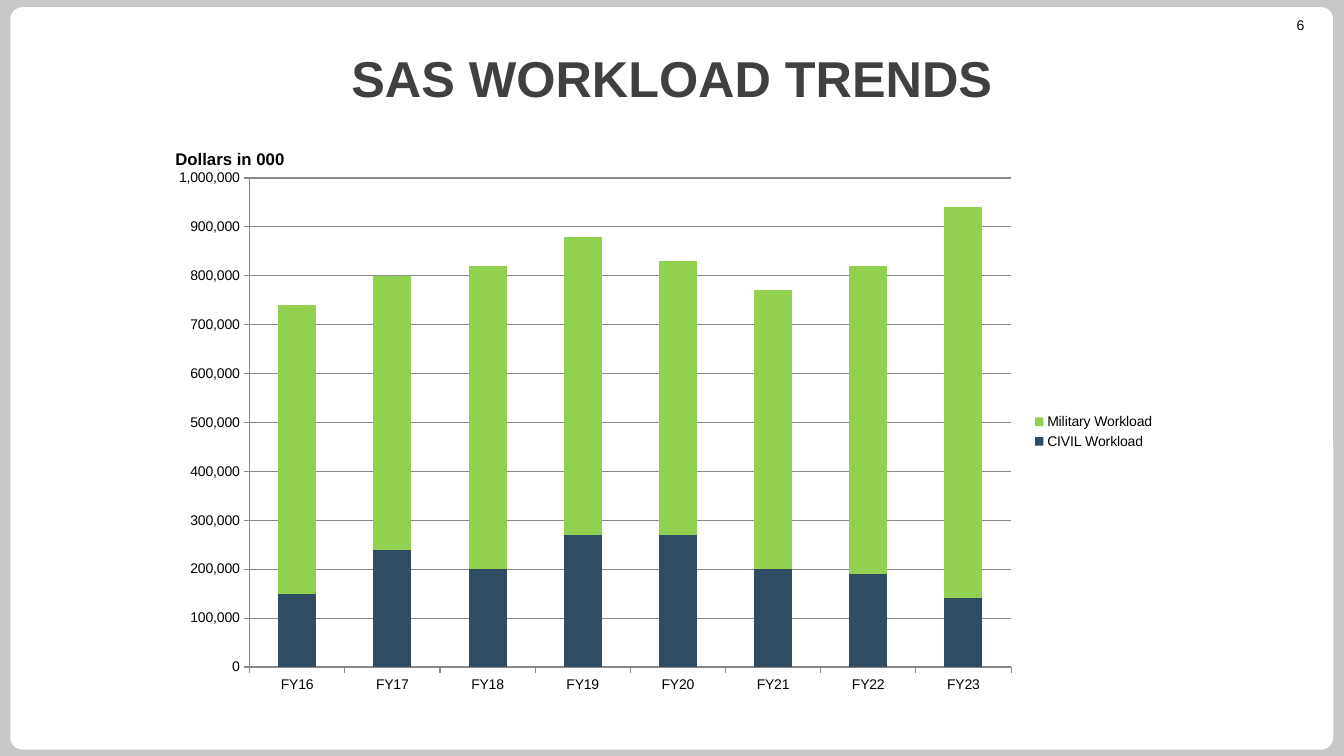
from lxml import etree
from pptx import Presentation
from pptx import util as u
from pptx.chart.data import CategoryChartData
from pptx.dml.color import RGBColor
from pptx.enum import chart as ch, shapes, text
from pptx.oxml import parse_xml
from pptx.oxml.ns import nsdecls

GREY = RGBColor(0xC8, 0xC8, 0xC8)
WHITE = RGBColor(0xFF, 0xFF, 0xFF)
BLACK = RGBColor(0, 0, 0)
CHARCOAL = RGBColor(0x40, 0x40, 0x40)
AXIS_GREY = RGBColor(0x87, 0x87, 0x87)
NAVY = RGBColor(0x2F, 0x4C, 0x62)
GREEN = RGBColor(0x92, 0xD0, 0x50)

YEARS = [f"FY{year}" for year in range(16, 24)]
WORKLOADS = [
    ("CIVIL Workload", NAVY,
     [150000, 240000, 200000, 270000, 270000, 200000, 190000, 140000]),
    ("Military Workload", GREEN,
     [590000, 560000, 620000, 610000, 560000, 570000, 630000, 800000]),
]


class SlideBuilder:
    font_name = "Arial"

    def __init__(self, slide):
        self.slide = slide
        slide.background.fill.solid()
        slide.background.fill.fore_color.rgb = GREY

    def style(self, font, size, color, bold=False):
        font.name = self.font_name
        font.size = u.Pt(size)
        font.bold = bold
        font.color.rgb = color

    def card(self, left, top, width, height):
        card = self.slide.shapes.add_shape(
            shapes.MSO_SHAPE.ROUNDED_RECTANGLE,
            u.Cm(left), u.Cm(top), u.Cm(width), u.Cm(height))
        card.adjustments[0] = 0.02
        card.shadow.inherit = False
        card.fill.solid()
        card.fill.fore_color.rgb = WHITE
        card.line.color.rgb = GREY
        card.line.width = u.Pt(4.5)
        # Send behind the title placeholder
        self.slide.shapes._spTree.insert(2, card._element)

    def title(self, wording, left, top, width, height):
        title = self.slide.shapes.title
        title.left, title.top = u.Cm(left), u.Cm(top)
        title.width, title.height = u.Cm(width), u.Cm(height)
        title.text_frame.text = wording
        title.text_frame.vertical_anchor = text.MSO_ANCHOR.MIDDLE
        heading = title.text_frame.paragraphs[0]
        heading.alignment = text.PP_ALIGN.CENTER
        self.style(heading.font, 36, CHARCOAL, bold=True)

    def label(self, wording, left, top, width, height, size, bold=False,
              align=text.PP_ALIGN.LEFT, inset=0.13, wrap=False):
        frame = self.slide.shapes.add_textbox(
            u.Cm(left), u.Cm(top), u.Cm(width), u.Cm(height)).text_frame
        frame.word_wrap = wrap
        frame.margin_top = frame.margin_bottom = u.Cm(inset)
        frame.text = wording
        frame.paragraphs[0].alignment = align
        self.style(frame.paragraphs[0].font, size, BLACK, bold)

    def stacked_columns(self, categories, series, left, top, width, height):
        data = CategoryChartData(number_format="#,##0")
        data.categories = categories
        for name, _, values in series:
            data.add_series(name, values)
        chart = self.slide.shapes.add_chart(
            ch.XL_CHART_TYPE.COLUMN_STACKED,
            u.Cm(left), u.Cm(top), u.Cm(width), u.Cm(height), data).chart
        chart.has_title = False
        self.style(chart.font, 10, BLACK)

        # Columns
        plot = chart.plots[0]
        plot.gap_width, plot.overlap = 150, 100
        plot.vary_by_categories = False
        for column, (_, color, _) in zip(plot.series, series):
            column.format.fill.solid()
            column.format.fill.fore_color.rgb = color

        # Axes and gridlines
        values_axis = chart.value_axis
        values_axis.minimum_scale, values_axis.maximum_scale = 0, 1000000
        values_axis.major_unit = 100000
        values_axis.has_major_gridlines = True
        values_axis.tick_labels.number_format = "#,##0"
        values_axis.tick_labels.number_format_is_linked = False
        for axis in (values_axis, chart.category_axis):
            axis.major_tick_mark = ch.XL_TICK_MARK.OUTSIDE
            axis.minor_tick_mark = ch.XL_TICK_MARK.NONE
        for part in (values_axis, chart.category_axis,
                     values_axis.major_gridlines):
            part.format.line.color.rgb = AXIS_GREY
            part.format.line.width = u.Pt(0.75)

        # Legend and plot area
        chart.has_legend = True
        chart.legend.position = ch.XL_LEGEND_POSITION.RIGHT
        chart.legend.include_in_layout = False
        self.place_plot(chart, x=0.09, y=0.036, w=0.757, h=0.895)

    def place_plot(self, chart, **fractions):
        area = chart._chartSpace.chart.plotArea
        for old in area.findall("{*}layout"):
            area.remove(old)
        layout = parse_xml(
            f'<c:layout {nsdecls("c")}><c:manualLayout>'
            '<c:layoutTarget val="inner"/><c:xMode val="edge"/>'
            '<c:yMode val="edge"/></c:manualLayout></c:layout>')
        for side, fraction in fractions.items():
            etree.SubElement(layout[0], f"{{{layout.nsmap['c']}}}{side}",
                             val=f"{fraction}")
        area.insert(0, layout)


def main():
    deck = Presentation()
    deck.slide_width, deck.slide_height = u.Cm(33.87), u.Cm(19.05)
    builder = SlideBuilder(deck.slides.add_slide(deck.slide_layouts[5]))

    # Frame and page number
    builder.card(0.18, 0.1, 33.5, 18.87)
    builder.label("6", 30.99, 0.41, 2.13, 0.43, size=10,
                  align=text.PP_ALIGN.RIGHT, inset=0, wrap=True)

    # Workload chart
    builder.stacked_columns(YEARS, WORKLOADS, 4.01, 3.99, 25.35, 13.77)

    # Headings
    builder.title("SAS WORKLOAD TRENDS", 0, 0.36, 33.87, 3.18)
    builder.label("Dollars in 000", 4.17, 3.61, 3.3, 0.76, size=12, bold=True)

    deck.save("out.pptx")


if __name__ == "__main__":
    main()
